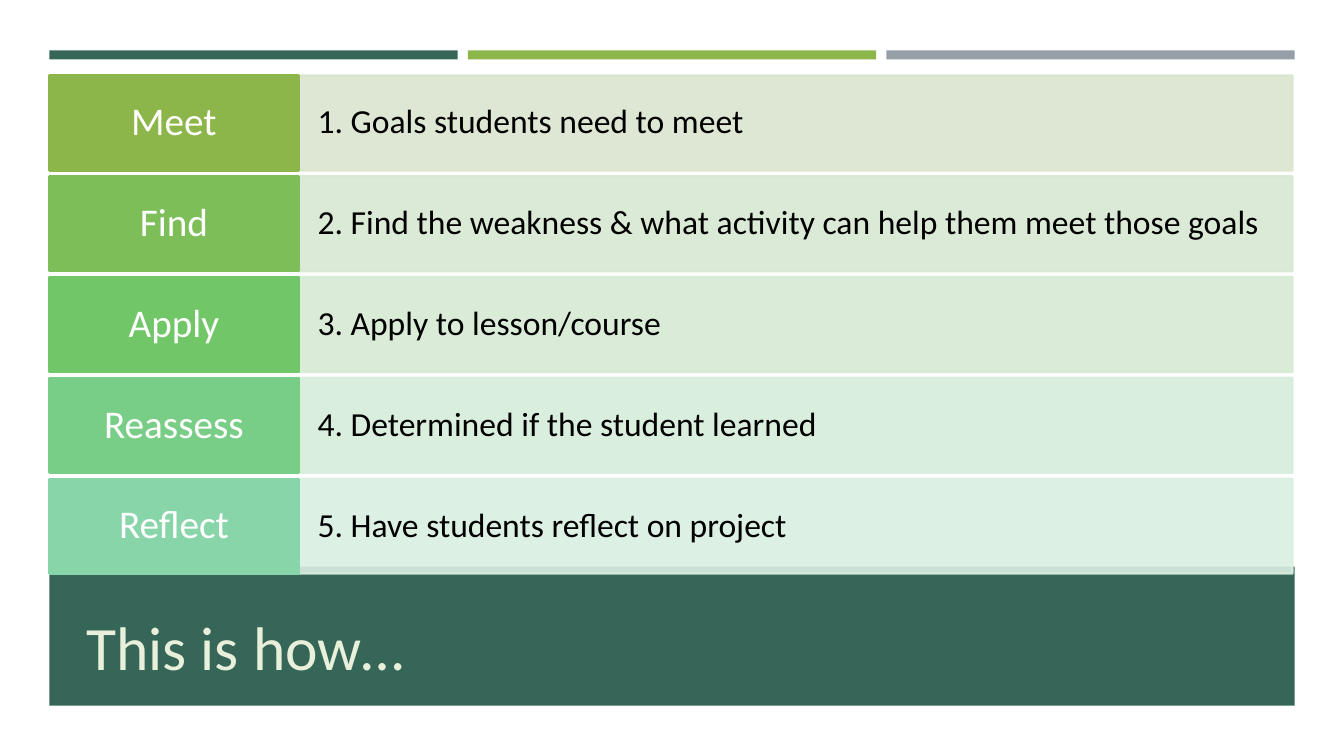
from pptx import Presentation
from pptx.dml.color import RGBColor
from pptx.enum import shapes, text
from pptx.oxml.ns import qn
from pptx.util import Inches, Pt
from lxml import etree

prs = Presentation()
prs.slide_width, prs.slide_height = Inches(13.33), Inches(7.5)
slide = prs.slides.add_slide(prs.slide_layouts[5])


def paint(fill, color, alpha=100):
    fill.solid()
    fill.fore_color.rgb = RGBColor.from_string(color)
    if alpha < 100:
        for clr in fill._xPr.iter(qn("a:srgbClr")):
            etree.SubElement(clr, qn("a:alpha"), val=str(alpha * 1000))


def add_box(x, y, w, h, color, alpha=100, edge=0):
    box = slide.shapes.add_shape(shapes.MSO_SHAPE.RECTANGLE,
                                 Inches(x), Inches(y), Inches(w), Inches(h))
    box.shadow.inherit = False
    paint(box.fill, color, alpha)
    if edge:
        box.line.width = Pt(edge)
        paint(box.line.fill, color, alpha)
    else:
        box.line.fill.background()
    return box


# Top bars and title band
left = 0.49
for i, color in enumerate(["366658", "8CB64A", "969FA7"]):
    add_box(left + 4.15 * i, 0.5, 4.05, 0.09, color)
add_box(left, 5.62, 12.35, 1.38, "366658")

# Steps: name, detail, name colour, detail colour
steps = [
    ("Meet", "1. Goals students need to meet", "8CB64A", "DAE5D0"),
    ("Find", "2. Find the weakness & what activity can help them meet those goals",
     "7DBE59", "D8E8D2"),
    ("Apply", "3. Apply to lesson/course", "71C668", "D6EBD4"),
    ("Reassess", "4. Determined if the student learned", "78CE86", "D7EDDB"),
    ("Reflect", "5. Have students reflect on project", "88D5A9", "DAEFE2"),
]
mid, center = text.MSO_ANCHOR.MIDDLE, text.PP_ALIGN.CENTER
for i, (name, detail, dark, pale) in enumerate(steps):
    top = 0.75 + i
    wide = add_box(2.96, top, 9.86, 0.94, pale, 90, 1.75)
    tag = add_box(left, top, 2.47, 0.94, dark, 100, 1.75)
    for box, words, size, color, align, side, pad in [
        (wide, detail, 24, "000000", text.PP_ALIGN.LEFT, 0.19, 0.24),
        (tag, name, 28, "FFFFFF", center, 0.13, 0.09),
    ]:
        frame = box.text_frame
        frame.text = words
        frame.word_wrap = True
        frame.vertical_anchor = mid
        frame.margin_left = frame.margin_right = Inches(side)
        frame.margin_top = frame.margin_bottom = Inches(pad)
        para = frame.paragraphs[0]
        para.alignment = align
        para.line_spacing = 0.9
        font = para.runs[0].font
        font.name, font.size = "Calibri", Pt(size)
        paint(font.fill, color)

# Title, in front of its band
title = slide.shapes.title
slide.shapes._spTree.append(title._element)
title.left, title.top = Inches(0.34), Inches(5.99)
title.width, title.height = Inches(4.19), Inches(0.84)
frame = title.text_frame
frame.text = "This is how…"
frame.vertical_anchor = mid
para = frame.paragraphs[0]
para.alignment = center
font = para.runs[0].font
font.name, font.size = "Calibri", Pt(44)
paint(font.fill, "E8F0DB")

prs.save("out.pptx")
